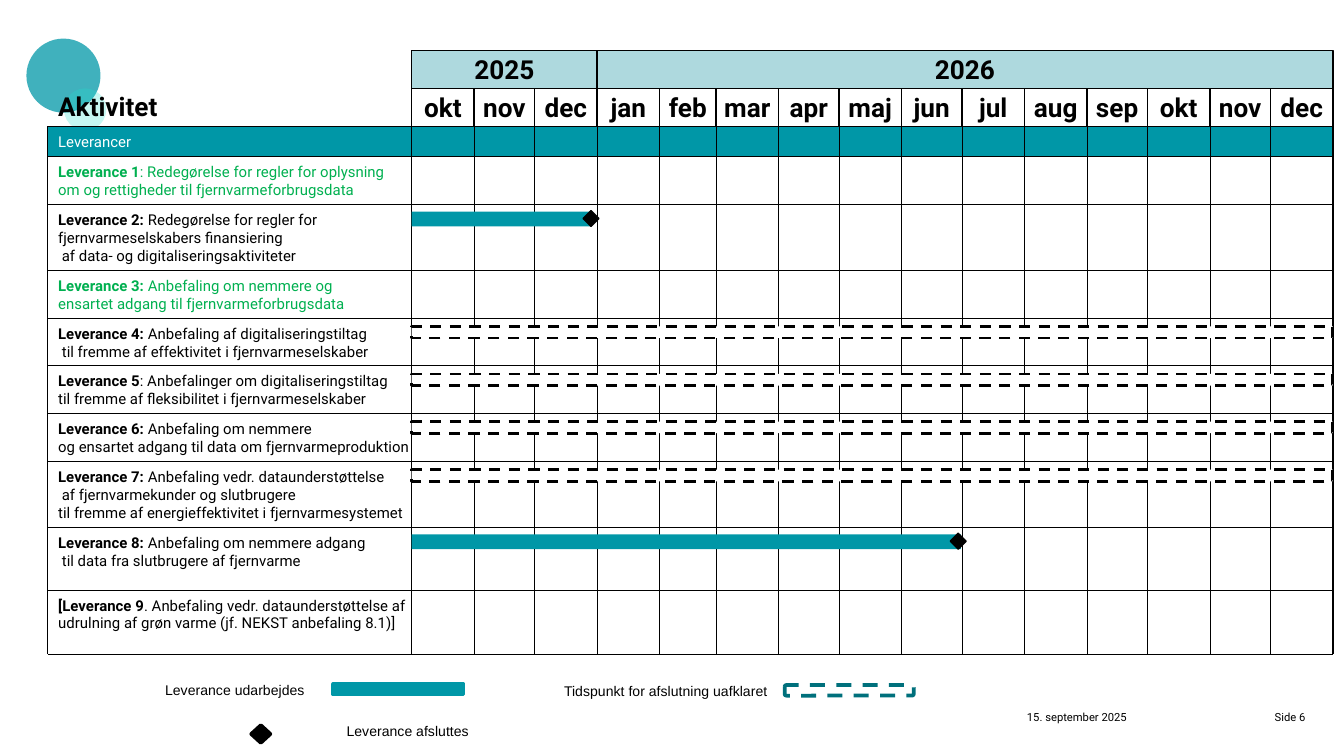
import itertools

import lxml.etree
import pptx
import pptx.dml.color
import pptx.enum.dml
import pptx.enum.shapes
import pptx.enum.text
import pptx.oxml.ns
import pptx.util

Cm = pptx.util.Cm
Pt = pptx.util.Pt
RGBColor = pptx.dml.color.RGBColor
SHAPE = pptx.enum.shapes.MSO_SHAPE
ALIGN = pptx.enum.text.PP_ALIGN
ANCHOR = pptx.enum.text.MSO_ANCHOR
qn = pptx.oxml.ns.qn

TEAL = RGBColor(0x00, 0x97, 0xA7)
DARK_TEAL = RGBColor(0x00, 0x70, 0x7C)
PALE_TEAL = RGBColor(0xAE, 0xD9, 0xDE)
MINT = RGBColor(0x1D, 0xE2, 0xCD)
GREEN = RGBColor(0x00, 0xB0, 0x50)
BLACK = RGBColor(0x00, 0x00, 0x00)
WHITE = RGBColor(0xFF, 0xFF, 0xFF)

deck = pptx.Presentation()
deck.slide_width = Cm(25.4)
deck.slide_height = Cm(14.29)
slide = deck.slides.add_slide(deck.slide_layouts[6])


def draw(kind, left, top, width, height, fill=None, line=None, weight=0.75, dashed=False):
    """Add a preset shape, measured in centimetres."""
    shape = slide.shapes.add_shape(kind, Cm(left), Cm(top), Cm(width), Cm(height))
    shape.shadow.inherit = False
    if fill is None:
        shape.fill.background()
    else:
        shape.fill.solid()
        shape.fill.fore_color.rgb = fill
    if line is None:
        shape.line.fill.background()
    else:
        shape.line.color.rgb = line
        shape.line.width = Pt(weight)
        if dashed:
            shape.line.dash_style = pptx.enum.dml.MSO_LINE.DASH
    return shape


def write(shape, lines, size, color=BLACK, font="Roboto", align=ALIGN.LEFT,
          anchor=ANCHOR.TOP, wrap=True, inset_x=0, inset_y=0):
    """Fill a shape with lines, each a list of (text, bold) runs."""
    frame = shape.text_frame
    frame.word_wrap = wrap
    frame.vertical_anchor = anchor
    frame.margin_left = frame.margin_right = Cm(inset_x)
    frame.margin_top = frame.margin_bottom = Cm(inset_y)
    for number, pieces in enumerate(lines):
        paragraph = frame.paragraphs[0] if number == 0 else frame.add_paragraph()
        paragraph.alignment = align
        for text, bold in pieces:
            run = paragraph.add_run()
            run.text = text
            run.font.name = font
            run.font.size = Pt(size)
            run.font.bold = bold
            run.font.color.rgb = color


# Decorative circles
for left, top, size, color, opacity in [(0.5, 0.73, 1.4, TEAL, 75), (1.21, 1.67, 0.8, MINT, 25)]:
    circle = draw(SHAPE.OVAL, left, top, size, size, color)
    tint = circle.fill._xPr.find(qn("a:solidFill"))[0]
    lxml.etree.SubElement(tint, qn("a:alpha")).set("val", str(opacity * 1000))

# Date and page number
for left, width, text, align in [(19.18, 3.43, "15. september 2025", ALIGN.LEFT),
                                 (22.66, 2.24, "Side 6", ALIGN.RIGHT)]:
    footer = slide.shapes.add_textbox(Cm(left), Cm(13.31), Cm(width), Cm(0.76))
    write(footer, [[(text, False)]], 6, align=align, inset_x=0.23, inset_y=0.11)

# Time scale: each month is as wide as its number of days
TABLE_LEFT, CALENDAR_LEFT, CALENDAR_RIGHT = 0.9, 7.78, 25.19
months = [("okt", 31), ("nov", 30), ("dec", 31), ("jan", 31), ("feb", 28), ("mar", 31),
          ("apr", 30), ("maj", 31), ("jun", 30), ("jul", 31), ("aug", 31), ("sep", 30),
          ("okt", 31), ("nov", 30), ("dec", 31)]
elapsed = [0, *itertools.accumulate(days for month, days in months)]
day_width = (CALENDAR_RIGHT - CALENDAR_LEFT) / elapsed[-1]
month_edges = [CALENDAR_LEFT + days * day_width for days in elapsed]
row_edges = [2.39, 2.95, 3.86, 5.11, 6.01, 6.91, 7.81, 8.72, 9.96, 11.15, 12.37]

# Row backgrounds
for row, color in enumerate([TEAL, WHITE]):
    draw(SHAPE.RECTANGLE, TABLE_LEFT, row_edges[row], CALENDAR_RIGHT - TABLE_LEFT,
         row_edges[row + 1] - row_edges[row], color)

# Year and month headings
headings = [("2025", month_edges[0], month_edges[3], 0.95, PALE_TEAL),
            ("2026", month_edges[3], month_edges[-1], 0.95, PALE_TEAL)]
for (month, days), start, end in zip(months, month_edges, month_edges[1:]):
    headings.append((month, start, end, 1.67, None))
for text, start, end, top, color in headings:
    heading = draw(SHAPE.RECTANGLE, start, top, end - start, 0.72, color, BLACK)
    write(heading, [[(text, True)]], 14, align=ALIGN.CENTER, anchor=ANCHOR.MIDDLE,
          wrap=False, inset_y=0.08)

# Grid lines, heavier around the table and the calendar
top, bottom = row_edges[0], row_edges[-1]
grid = [(x, top, x, bottom, 0.25) for x in month_edges[1:-1]]
grid += [(x, top, x, bottom, 0.75) for x in (TABLE_LEFT, CALENDAR_LEFT, CALENDAR_RIGHT)]
grid += [(TABLE_LEFT, y, CALENDAR_RIGHT, y, 0.75 if y in (top, bottom) else 0.25)
         for y in row_edges]
for x1, y1, x2, y2, weight in grid:
    rule = slide.shapes.add_connector(pptx.enum.shapes.MSO_CONNECTOR.STRAIGHT,
                                      Cm(x1), Cm(y1), Cm(x2), Cm(y2))
    rule.line.color.rgb = BLACK
    rule.line.width = Pt(weight)
    lxml.etree.SubElement(rule._element.spPr, qn("a:effectLst"))

# Work bars with finish marks: row, bar end, centre of mark
for row, bar_end, finish in [(2, 11.18, 11.17), (8, 18.16, 18.11)]:
    draw(SHAPE.RECTANGLE, CALENDAR_LEFT, row_edges[row] + 0.14, bar_end - CALENDAR_LEFT, 0.28, TEAL)
    draw(SHAPE.DIAMOND, finish - 0.15, row_edges[row] + 0.12, 0.3, 0.3, BLACK, BLACK)

# Bars with an open finish
for row in range(4, 8):
    draw(SHAPE.RECTANGLE, CALENDAR_LEFT, row_edges[row] + 0.16, CALENDAR_RIGHT - CALENDAR_LEFT,
         0.22, WHITE, BLACK, 1.5, dashed=True)

# Activity column
activities = [
    ("", ["Leverancer"], WHITE),
    ("Leverance 1", [": Redegørelse for regler for oplysning",
                     "om og rettigheder til fjernvarmeforbrugsdata"], GREEN),
    ("Leverance 2: ", ["Redegørelse for regler for", "fjernvarmeselskabers finansiering",
                       " af data- og digitaliseringsaktiviteter"], BLACK),
    ("Leverance 3: ", ["Anbefaling om nemmere og",
                       "ensartet adgang til fjernvarmeforbrugsdata"], GREEN),
    ("Leverance 4: ", ["Anbefaling af digitaliseringstiltag",
                       " til fremme af effektivitet i fjernvarmeselskaber"], BLACK),
    ("Leverance 5", [": Anbefalinger om digitaliseringstiltag",
                     "til fremme af fleksibilitet i fjernvarmeselskaber"], BLACK),
    ("Leverance 6: ", ["Anbefaling om nemmere",
                       "og ensartet adgang til data om fjernvarmeproduktion"], BLACK),
    ("Leverance 7: ", ["Anbefaling vedr. dataunderstøttelse",
                       " af fjernvarmekunder og slutbrugere",
                       "til fremme af energieffektivitet i fjernvarmesystemet"], BLACK),
    ("Leverance 8: ", ["Anbefaling om nemmere adgang",
                       " til data fra slutbrugere af fjernvarme"], BLACK),
    ("[Leverance 9", [". Anbefaling vedr. dataunderstøttelse af",
                      "udrulning af grøn varme (jf. NEKST anbefaling 8.1)]"], BLACK),
]
for (name, texts, color), row_top in zip(activities, row_edges):
    activity = slide.shapes.add_textbox(Cm(1.1), Cm(row_top + 0.12), Cm(7), Cm(0.34 * len(texts)))
    lines = [[(text, False)] for text in texts]
    if name:
        lines[0].insert(0, (name, True))
    write(activity, lines, 8, color)

column_title = slide.shapes.add_textbox(Cm(1.1), Cm(1.73), Cm(3), Cm(0.58))
write(column_title, [[("Aktivitet", True)]], 14, anchor=ANCHOR.BOTTOM)

# Legend
draw(SHAPE.RECTANGLE, 6.3, 12.93, 2.46, 0.2, TEAL, TEAL, 2)
draw(SHAPE.ROUNDED_RECTANGLE, 14.83, 12.95, 2.44, 0.2, WHITE, DARK_TEAL, 2, dashed=True)
draw(SHAPE.DIAMOND, 4.75, 13.71, 0.36, 0.33, BLACK, BLACK, 2)
for text, left, top in [("Leverance udarbejdes", 2.87, 12.75),
                        ("Tidspunkt for afslutning uafklaret", 10.41, 12.78),
                        ("Leverance afsluttes", 6.3, 13.52)]:
    caption = slide.shapes.add_textbox(Cm(left), Cm(top), Cm(4.5), Cm(0.58))
    write(caption, [[(text, False)]], 7.5, font="Arial", inset_x=0.25, inset_y=0.13)

deck.save("out.pptx")
